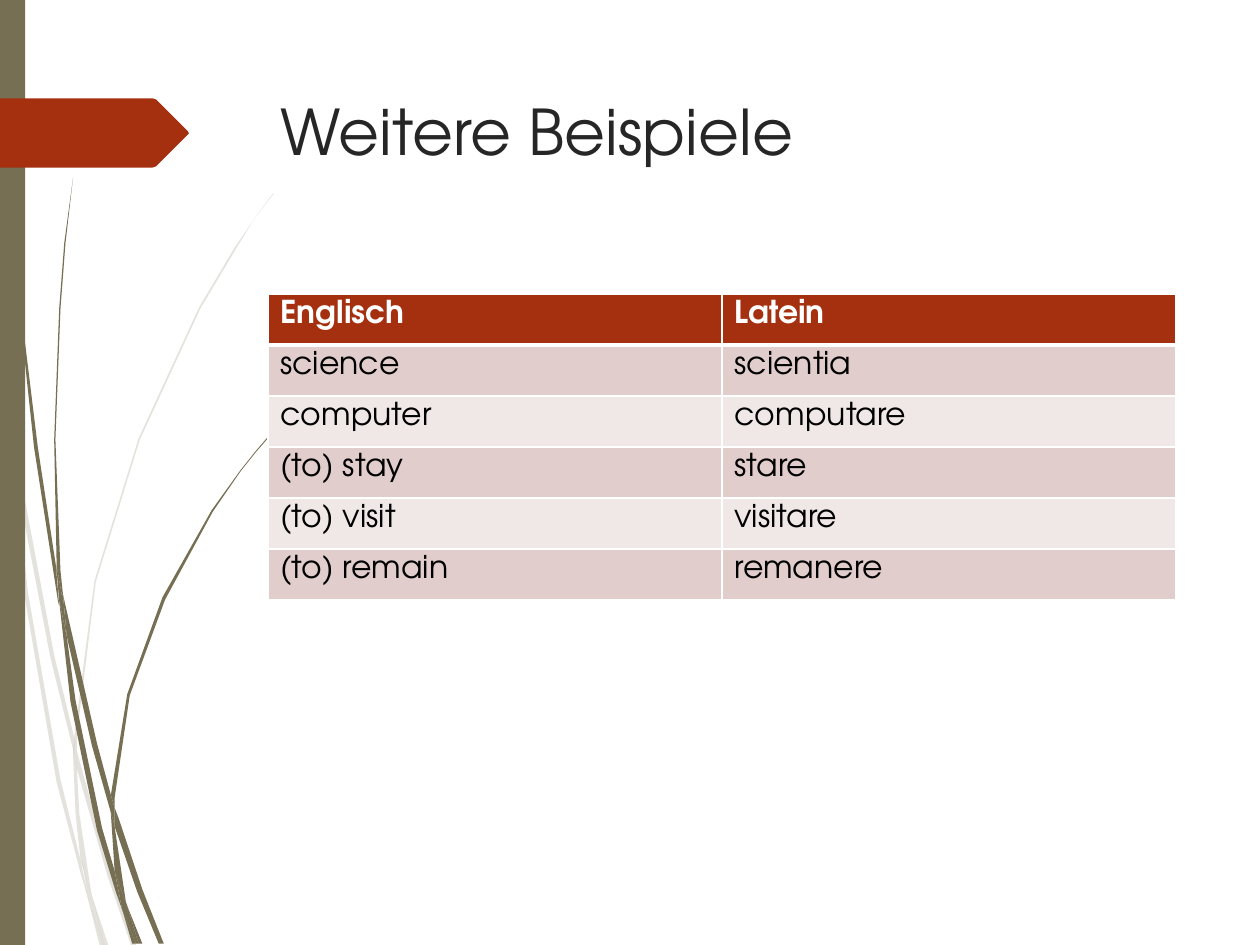
from lxml.etree import SubElement
from pptx import Presentation
from pptx.dml.color import RGBColor
from pptx.enum.shapes import MSO_SHAPE as Shape
from pptx.enum.text import MSO_ANCHOR as Anchor, MSO_AUTO_SIZE as AutoSize, PP_ALIGN as Align
from pptx.oxml.ns import qn
from pptx.util import Pt

FONT = "TeX Gyre Adventor"
OLIVE, RED, WHITE, BLACK, GREY = "766F54", "A53010", "FFFFFF", "000000", "262626"
BANDS = ["E1CDCC", "F0E8E7"]
GRID = Pt(0.72)
LEFT, WIDTH = 153, 519
ROW_HEIGHT = 29.16

ROWS = [
    ("Englisch", "Latein"),
    ("science", "scientia"),
    ("computer", "computare"),
    ("(to) stay", "stare"),
    ("(to) visit", "visitare"),
    ("(to) remain", "remanere"),
]

PALE_BLADES = [
    [(8, 350), (6, 322), (0, 282), (0, 299), (7, 344)],
    [(40, 522), (59, 599), (59, 586), (43, 520), (10, 345), (12, 376)],
    [(64, 607), (61, 596), (61, 610), (85, 694), (104, 750), (108, 750), (88, 692)],
    [(83, 750), (86, 750), (73, 711)],
    [(64, 683), (48, 619), (22, 469), (12, 376), (8, 350), (19, 470), (45, 621),
     (64, 693), (70, 714), (69, 707)],
    [(58, 599), (60, 646), (64, 683), (67, 692), (73, 711), (72, 706), (63, 646),
     (61, 610), (61, 608)],
    [(61, 584), (76, 462), (111, 349), (159, 245), (187, 198), (201, 175), (217, 154),
     (217, 153), (201, 175), (186, 197), (158, 244), (110, 348), (75, 461), (59, 584),
     (59, 586), (61, 596)],
    [(70, 714), (79, 750), (82, 750)],
    [(61, 608), (61, 610), (61, 596), (59, 586), (58, 599)],
    [(67, 692), (65, 683), (69, 707), (70, 714), (82, 750), (83, 750), (73, 711)],
]

DARK_BLADES = [
    [(5, 110), (14, 233), (27, 355), (46, 477), (47, 481), (45, 457), (45, 453),
     (30, 355), (15, 232), (6, 109), (4, 48), (3, 0), (2, 0), (3, 48)],
    [(73, 592), (88, 645), (88, 633), (88, 631), (77, 590), (50, 472), (53, 505)],
    [(94, 649), (91, 641), (91, 656), (109, 708), (126, 749), (130, 749), (113, 706)],
    [(91, 691), (81, 657), (60, 556), (53, 505), (47, 477), (56, 557), (77, 659),
     (92, 708), (97, 722), (96, 717)],
    [(50, 472), (48, 453), (44, 349), (48, 245), (52, 193), (58, 141), (57.5, 141),
     (51, 193), (47, 245), (43, 349), (45, 449), (49, 472)],
    [(110, 749), (113, 749), (101, 719)],
    [(47, 477), (53, 505), (50, 472), (49, 472), (45, 449), (45, 453)],
    [(91, 633), (103, 552), (131, 476), (169, 406), (191, 374), (203, 359), (216, 344),
     (215, 344), (203, 358), (191, 373), (168, 405), (129, 474), (101, 551), (88, 631),
     (91, 641)],
    [(97, 722), (105, 749), (108, 749)],
    [(88, 645), (91, 691), (96, 706), (101, 719), (100, 716), (91, 656), (90, 651)],
    [(88, 645), (90, 651), (91, 656), (91, 641), (88, 631), (88, 633)],
    [(96, 706), (91, 691), (96, 717), (97, 722), (108, 749), (110, 749), (101, 719)],
]

POINTER = [(0, 78), (121, 78), (124, 79), (149, 104), (149.5, 105.5), (149, 107),
           (124, 132), (121, 133), (0, 133)]


def color(value):
    """Turn a hex string into a colour."""
    return RGBColor.from_string(value)


def paint(shape, fill, opacity=100):
    """Fill a shape without line or shadow."""
    shape.shadow.inherit = False
    shape.line.fill.background()
    shape.fill.solid()
    shape.fill.fore_color.rgb = color(fill)
    if opacity < 100:
        tint = shape.fill._xPr.find(".//" + qn("a:srgbClr"))
        SubElement(tint, qn("a:alpha"), val=str(opacity * 1000))


def add_outline(shapes, points, fill, opacity=100):
    """Draw a closed outline whose points are hundredths of an inch."""
    builder = shapes.build_freeform(*points[0], scale=GRID)
    builder.add_line_segments(points[1:], close=True)
    paint(builder.convert_to_shape(), fill, opacity)


def add_blades(page, blades, opacity=100):
    """Draw a group of grass blades."""
    group = page.shapes.add_group_shape()
    for points in blades:
        add_outline(group.shapes, points, OLIVE, opacity)


def style_text(para, size, fill, bold=False):
    """Set the font of a paragraph."""
    para.font.name = FONT
    para.font.size = Pt(size)
    para.font.bold = bold
    para.font.color.rgb = color(fill)


def add_title(page, text):
    """Place and format the title."""
    title = page.shapes.title
    title.left, title.top, title.width, title.height = Pt(LEFT), Pt(49), Pt(WIDTH), Pt(101)
    frame = title.text_frame
    frame.text = text
    frame.word_wrap = True
    frame.auto_size = AutoSize.NONE
    frame.vertical_anchor = Anchor.TOP
    para = frame.paragraphs[0]
    para.alignment = Align.LEFT
    style_text(para, 36, GREY)


def add_borders(cell, top, bottom):
    """Give a cell white borders."""
    properties = cell._tc.get_or_add_tcPr()
    for side, width in (("L", 1), ("R", 1), ("T", top), ("B", bottom)):
        line = SubElement(properties, qn("a:ln" + side), w=str(Pt(width)))
        SubElement(SubElement(line, qn("a:solidFill")), qn("a:srgbClr"), val=WHITE)


def add_word_table(page, rows):
    """Add the word table with a header and banded rows."""
    table = page.shapes.add_table(len(rows), len(rows[0]), Pt(LEFT), Pt(168), Pt(WIDTH),
                                  Pt(ROW_HEIGHT * len(rows))).table
    for index, words in enumerate(rows):
        header = index == 0
        table.rows[index].height = Pt(ROW_HEIGHT)
        for column, word in enumerate(words):
            cell = table.cell(index, column)
            cell.text = word
            style_text(cell.text_frame.paragraphs[0], 18, WHITE if header else BLACK, header)
            add_borders(cell, 3 if index == 1 else 1, 3 if header else 1)
            cell.fill.solid()
            cell.fill.fore_color.rgb = color(RED if header else BANDS[(index - 1) % 2])


def main():
    """Build the slide and save it."""
    deck = Presentation()
    deck.slide_width, deck.slide_height = Pt(720), Pt(540)
    page = deck.slides.add_slide(deck.slide_layouts[5])
    add_blades(page, PALE_BLADES, 20)
    add_blades(page, DARK_BLADES)
    paint(page.shapes.add_shape(Shape.RECTANGLE, 0, 0, Pt(14.4), Pt(540)), OLIVE)
    add_outline(page.shapes, POINTER, RED)
    add_title(page, "Weitere Beispiele")
    add_word_table(page, ROWS)
    deck.save("out.pptx")


if __name__ == "__main__":
    main()
